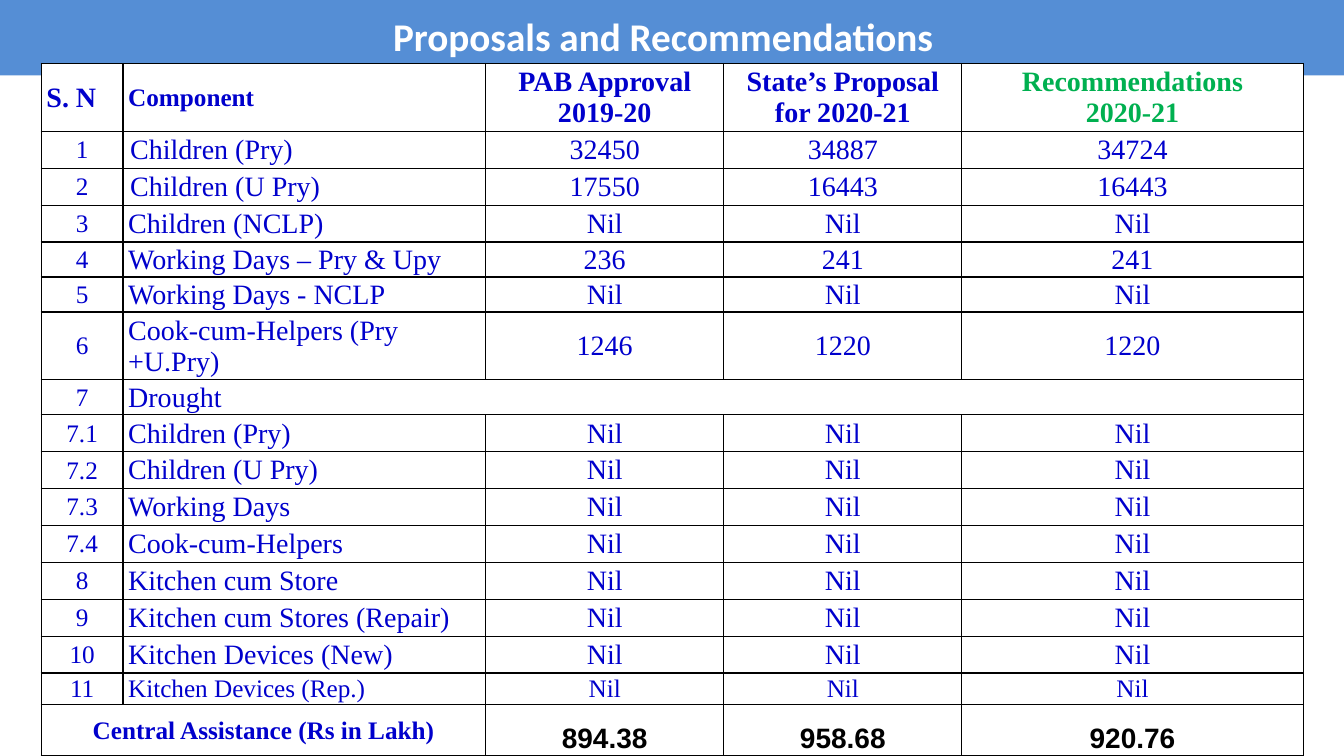
from dataclasses import dataclass

from lxml.etree import SubElement as Sub
from pptx import Presentation
from pptx.dml.color import RGBColor as RGB
from pptx.enum.shapes import MSO_SHAPE as Shape
from pptx.enum.text import MSO_ANCHOR as Anchor, PP_ALIGN as Align
from pptx.oxml.ns import qn
from pptx.util import Cm, Pt

TITLE = "Proposals and Recommendations"
HEAD = ("S. N", "Component", "PAB Approval 2019-20",
        "State’s Proposal for 2020-21", "Recommendations\n2020-21")
NIL = ("Nil",) * 3
ITEMS = [
    ("1", "Children (Pry)", "32450", "34887", "34724"),
    ("2", "Children (U Pry)", "17550", "16443", "16443"),
    ("3", "Children (NCLP)", *NIL),
    ("4", "Working Days – Pry & Upy", "236", "241", "241"),
    ("5", "Working Days - NCLP", *NIL),
    ("6", "Cook-cum-Helpers (Pry +U.Pry)", "1246", "1220", "1220"),
    ("7", "Drought", "", "", ""),
    ("7.1", "Children (Pry)", *NIL),
    ("7.2", "Children (U Pry)", *NIL),
    ("7.3", "Working Days", *NIL),
    ("7.4", "Cook-cum-Helpers", *NIL),
    ("8", "Kitchen cum Store", *NIL),
    ("9", "Kitchen cum Stores (Repair)", *NIL),
    ("10", "Kitchen Devices (New)", *NIL),
    ("11", "Kitchen Devices (Rep.)", *NIL),
]
TOTAL = ("Central Assistance (Rs in Lakh)", "", "894.38", "958.68", "920.76")
ROWS = [HEAD, *ITEMS, TOTAL]
LAST = len(ROWS) - 1
DROUGHT = 7

# Lengths in centimetres
WIDE, HIGH = 33.87, 19.05
BAND = 1.9
LEFT, TOP = 1.04, 1.6
COLS = (2.06, 9.14, 6, 6, 8.6)
STEP = 0.93
TALL = {0: 1.71, 4: 0.88, 5: 0.88, 6: 1.71, 7: 0.88, 15: 0.79, LAST: 1.3}


@dataclass(frozen=True)
class Theme:
    band: RGB = RGB(0x55, 0x8E, 0xD5)
    white: RGB = RGB(255, 255, 255)
    blue: RGB = RGB(0, 0, 0xCC)
    green: RGB = RGB(0, 0xB0, 0x50)
    black: RGB = RGB(0, 0, 0)
    title: int = 28
    body: int = 20
    small: int = 18
    head: str = "Calibri"
    serif: str = "Times New Roman"
    sans: str = "Arial"


T = Theme()


def style(par, size, face, color, bold, align):
    par.alignment = align
    for run in par.runs:
        font = run.font
        font.size, font.name, font.bold = Pt(size), face, bold
        font.color.rgb = color


def border(cell):
    props = cell._tc.get_or_add_tcPr()
    for side in ("lnL", "lnR", "lnT", "lnB"):
        line = Sub(props, qn(f"a:{side}"), w=str(Pt(1)))
        Sub(Sub(line, qn("a:solidFill")), qn("a:srgbClr"), val=str(T.black))


def look(row, col):
    """Return size, face, colour, bold and alignment for one cell."""
    value = col > 1
    if row == LAST and value:
        return T.body, T.sans, T.black, True, Align.CENTER
    size = T.small if row == LAST - 1 or (row == LAST and not value) else T.body
    if (row == 0 and col == 1) or (row > 0 and col == 0):
        size = T.small
    color = T.green if row == 0 and col == 4 else T.blue
    left = col == 1 or (row == 0 and col == 0)
    return (size, T.serif, color, row in (0, LAST),
            Align.LEFT if left else Align.CENTER)


def fill_cell(cell, text, row, col):
    border(cell)
    cell.fill.solid()
    cell.fill.fore_color.rgb = T.white
    cell.vertical_anchor = Anchor.MIDDLE
    wide = col > 1 or (col == 1 and row in (1, 2))
    cell.margin_left = cell.margin_right = Cm(0.18 if wide else 0.13)
    cell.margin_top, cell.margin_bottom = Cm(0.02), 0
    if not text:
        return
    cell.text_frame.text = text
    for par in cell.text_frame.paragraphs:
        style(par, *look(row, col))
        if row == LAST and col > 1:
            par.line_spacing = 1.5


def add_title(slide):
    band = slide.shapes.add_shape(Shape.RECTANGLE, 0, 0, Cm(WIDE), Cm(BAND))
    band.shadow.inherit = False
    band.fill.solid()
    band.fill.fore_color.rgb = T.band
    band.line.fill.background()
    frame = band.text_frame
    frame.word_wrap = True
    frame.vertical_anchor = Anchor.MIDDLE
    frame.margin_right = Cm(0.7)
    frame.margin_top, frame.margin_bottom = Cm(0.1), Cm(0.18)
    frame.text = TITLE
    style(frame.paragraphs[0], T.title, T.head, T.white, True, Align.CENTER)


def add_grid(slide):
    highs = [TALL.get(row, STEP) for row in range(len(ROWS))]
    grid = slide.shapes.add_table(len(ROWS), len(COLS), Cm(LEFT), Cm(TOP),
                                  Cm(sum(COLS)), Cm(sum(highs))).table
    grid.first_row = grid.horz_banding = False
    for col, width in enumerate(COLS):
        grid.columns[col].width = Cm(width)
    for row, texts in enumerate(ROWS):
        grid.rows[row].height = Cm(highs[row])
        for col, text in enumerate(texts):
            fill_cell(grid.cell(row, col), text, row, col)
    grid.cell(DROUGHT, 1).merge(grid.cell(DROUGHT, 4))
    grid.cell(LAST, 0).merge(grid.cell(LAST, 1))


def main():
    deck = Presentation()
    deck.slide_width, deck.slide_height = Cm(WIDE), Cm(HIGH)
    slide = deck.slides.add_slide(deck.slide_layouts[6])
    add_title(slide)
    add_grid(slide)
    deck.save("out.pptx")


if __name__ == "__main__":
    main()
